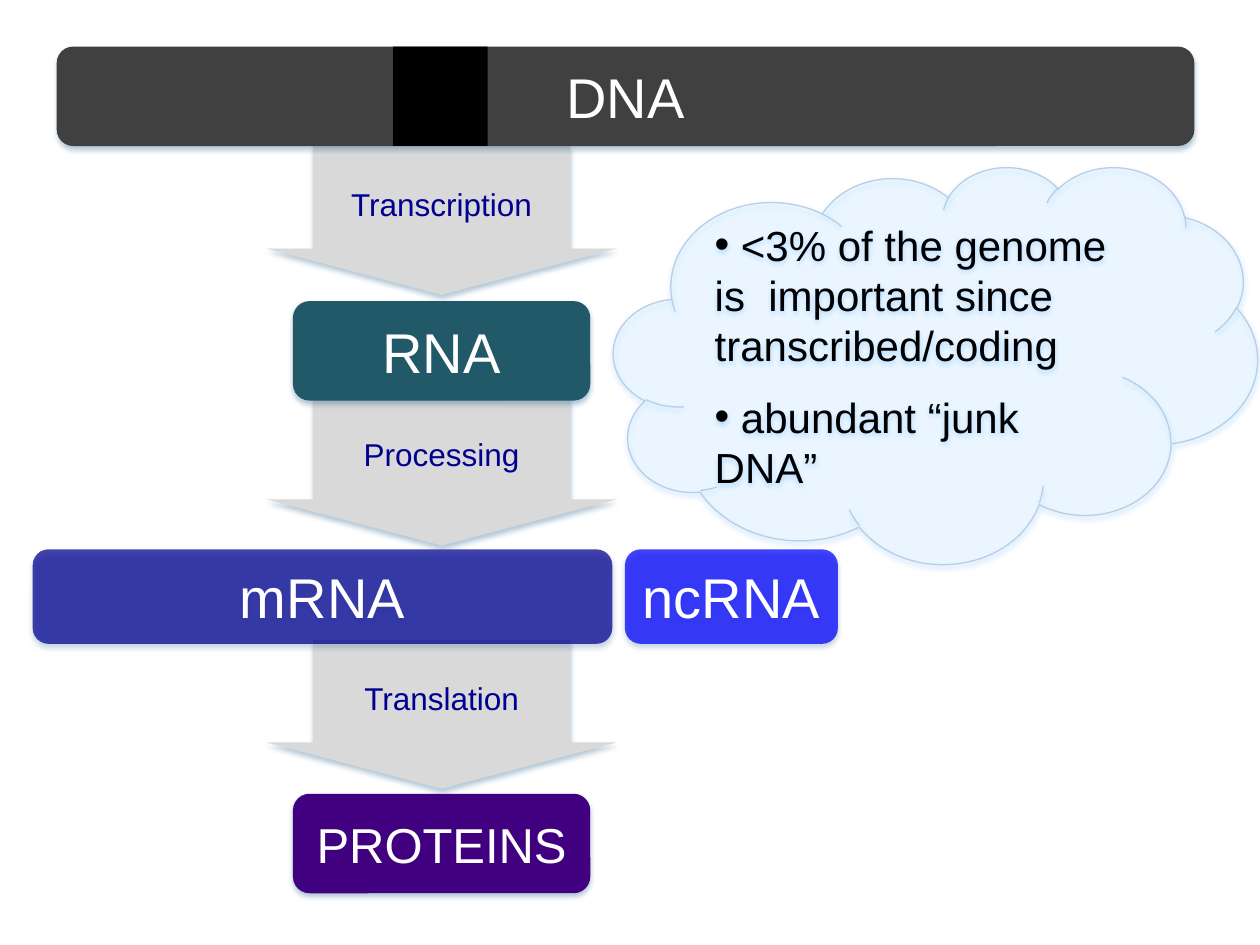
from dataclasses import dataclass
from typing import Optional

from lxml import etree
from pptx import Presentation
from pptx import util as u
from pptx.dml.color import RGBColor
from pptx.enum import shapes, text
from pptx.oxml import ns

COLORS = {
    "arrow": "D9D9D9", "label": "000090", "dna": "404040", "gene": "000000",
    "rna": "215968", "mrna": "000090", "ncrna": "0000FF", "protein": "400080",
    "cloud": "DBF5FF", "cloud_edge": "B9CDE5", "cloud_shadow": "0080FF",
    "shadow": "25608D", "white": "FFFFFF", "black": "000000",
}
FONT = "Arial"
WIDTH, HEIGHT = u.Inches(10), u.Inches(7.5)
SPINE = 35.05  # centre of the main column, percent of slide width
ARROW_W, ARROW_H = 27.8, 15.73
BOX_W, BOX_H = 23.6, 10.53
RNA_ROW_H = 10
RNA_ROW_TOP = 58.13

ROUND = shapes.MSO_SHAPE.ROUNDED_RECTANGLE


@dataclass
class Block:
    """A shape placed in percent of the slide's width and height."""
    left: float
    top: float
    width: float
    height: float
    fill: str
    label: str = ""
    size: int = 32
    font_color: str = "white"
    kind: shapes.MSO_SHAPE = ROUND
    opacity: int = 100
    shadow: Optional[str] = "shadow"


def step(top: float, label: str) -> Block:
    return Block(SPINE - ARROW_W / 2, top, ARROW_W, ARROW_H, "arrow", label, 18,
                 "label", shapes.MSO_SHAPE.DOWN_ARROW)


def molecule(top: float, label: str, fill: str, size: int = 32) -> Block:
    return Block(SPINE - BOX_W / 2, top, BOX_W, BOX_H, fill, label, size)


def rgb(name: str) -> RGBColor:
    return RGBColor.from_string(COLORS[name])


def add_alpha(color_element, percent: int) -> None:
    etree.SubElement(color_element, ns.qn("a:alpha"), val=str(percent * 1000))


def add_shadow(shape, color: str) -> None:
    effects = shape._element.spPr.find(ns.qn("a:effectLst"))
    outer = etree.SubElement(
        effects, ns.qn("a:outerShdw"), blurRad=str(u.Pt(3.1)),
        dist=str(u.Pt(1.8)), dir="5400000", rotWithShape="0")
    tint = etree.SubElement(outer, ns.qn("a:srgbClr"), val=COLORS[color])
    add_alpha(tint, 35)


def write(paragraph, words: str, size: int, color: str) -> None:
    run = paragraph.add_run()
    run.text = words
    run.font.name = FONT
    run.font.size = u.Pt(size)
    run.font.color.rgb = rgb(color)


def draw(slide, block: Block):
    shape = slide.shapes.add_shape(
        block.kind,
        round(WIDTH * block.left / 100), round(HEIGHT * block.top / 100),
        round(WIDTH * block.width / 100), round(HEIGHT * block.height / 100))
    shape.fill.solid()
    shape.fill.fore_color.rgb = rgb(block.fill)
    if block.opacity < 100:
        add_alpha(shape._element.spPr.find(".//" + ns.qn("a:srgbClr")), block.opacity)
    shape.line.fill.background()
    shape.shadow.inherit = False
    if block.shadow:
        add_shadow(shape, block.shadow)
    if block.kind == shapes.MSO_SHAPE.DOWN_ARROW:
        shape.adjustments[0] = 0.734
        shape.adjustments[1] = 0.311
    frame = shape.text_frame
    frame.word_wrap = True
    frame.vertical_anchor = text.MSO_ANCHOR.MIDDLE
    if block.label:
        frame.paragraphs[0].alignment = text.PP_ALIGN.CENTER
        write(frame.paragraphs[0], block.label, block.size, block.font_color)
    return shape


def draw_cloud(slide, block: Block, remarks: list[str]) -> None:
    cloud = draw(slide, block)
    cloud.line.color.rgb = rgb("cloud_edge")
    cloud.line.width = u.Pt(0.75)
    frame = cloud.text_frame
    for index, remark in enumerate(remarks):
        paragraph = frame.add_paragraph() if index else frame.paragraphs[0]
        paragraph.alignment = text.PP_ALIGN.LEFT
        if index < len(remarks) - 1:
            paragraph.space_after = u.Pt(12)
        properties = paragraph._p.get_or_add_pPr()
        etree.SubElement(properties, ns.qn("a:buFont"), typeface=FONT)
        etree.SubElement(properties, ns.qn("a:buChar"), char="•")
        write(paragraph, remark, block.size, block.font_color)


PATHWAY = [
    step(67.73, "Translation"),
    molecule(84, "PROTEINS", "protein", 28),
    Block(2.6, RNA_ROW_TOP, 46, RNA_ROW_H, "mrna", "mRNA", opacity=73),
    step(42, "Processing"),
    molecule(31.87, "RNA", "rna"),
    step(15.47, "Transcription"),
    Block(49.6, RNA_ROW_TOP, 16.9, RNA_ROW_H, "ncrna", "ncRNA", opacity=73),
]
CLOUD = Block(48.7, 17.6, 51.1, 42, "cloud", size=24, font_color="black",
              kind=shapes.MSO_SHAPE.CLOUD, opacity=19, shadow="cloud_shadow")
REMARKS = [
    " <3% of the genome is  important since transcribed/coding",
    " abundant “junk DNA”",
]
GENOME = [
    Block(4.5, 4.93, 90.3, BOX_H, "dna", "DNA"),
    Block(31.2, 4.93, 7.5, BOX_H, "gene", kind=shapes.MSO_SHAPE.RECTANGLE, shadow=None),
]


def main() -> None:
    deck = Presentation()
    deck.slide_width, deck.slide_height = WIDTH, HEIGHT
    slide = deck.slides.add_slide(deck.slide_layouts[6])
    for block in PATHWAY:
        draw(slide, block)
    draw_cloud(slide, CLOUD, REMARKS)
    for block in GENOME:
        draw(slide, block)
    deck.save("out.pptx")


if __name__ == "__main__":
    main()
